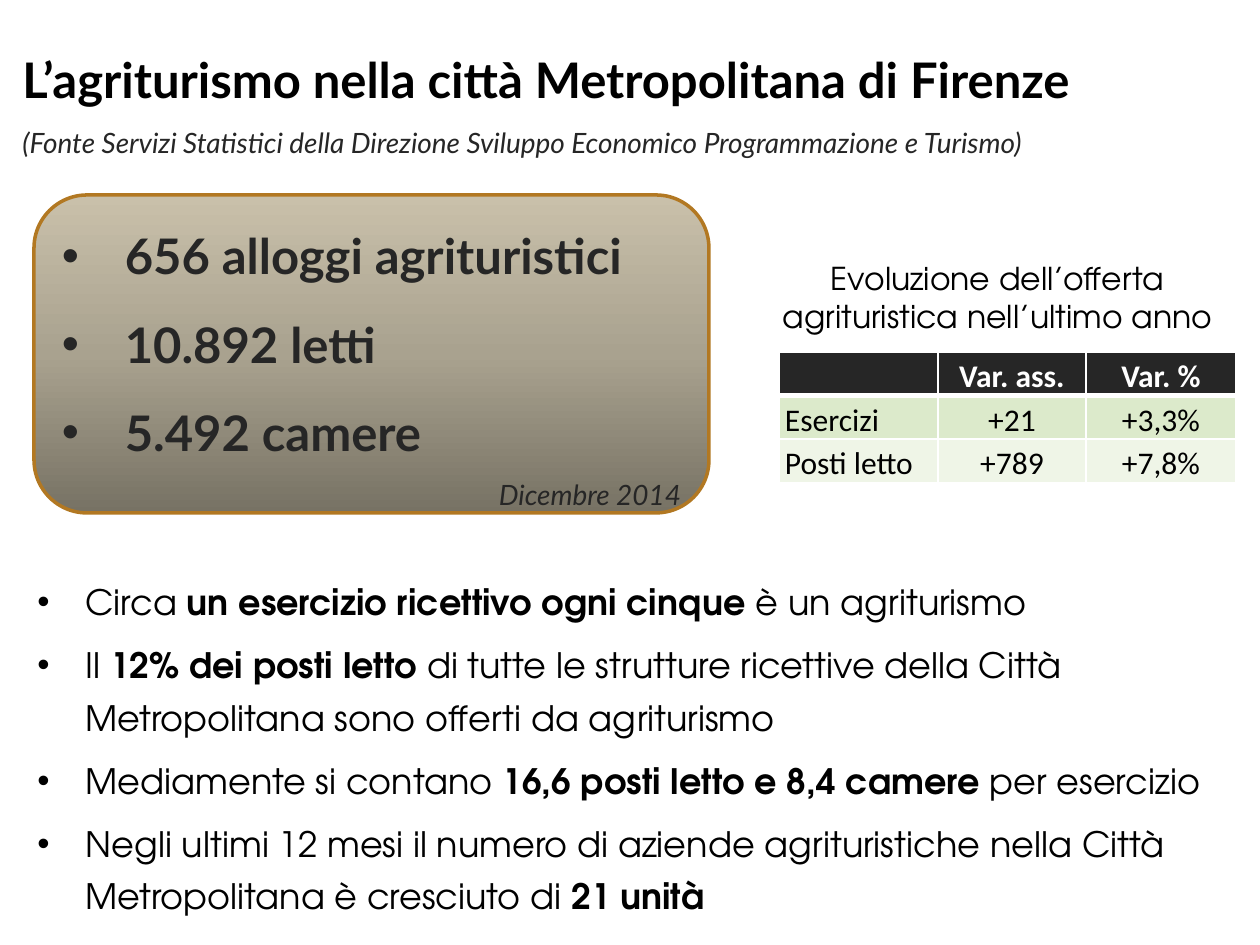
from copy import deepcopy

from lxml import etree
from pptx import Presentation
from pptx import util as u
from pptx.dml.color import RGBColor
from pptx.enum import shapes, text
from pptx.oxml import ns

SCALE = 914400 / 126
COLORS = {
    "black": "000000", "ink": "262626", "white": "FFFFFF", "border": "B27822",
    "dark": "777264", "mid": "A9A28F", "light": "C9C0AA",
    "band": "DCEACB", "pale": "EFF5E7",
}
LATO, ADVENTOR, CALIBRI = "Lato", "TeX Gyre Adventor", "Calibri"
LEFT, CENTER, RIGHT = text.PP_ALIGN.LEFT, text.PP_ALIGN.CENTER, text.PP_ALIGN.RIGHT

FACTS = [
    [("Circa ", False), ("un esercizio ricettivo ogni cinque ", True),
     ("è un agriturismo", False)],
    [("Il ", False), ("12% dei posti letto ", True),
     ("di tutte le strutture ricettive della Città Metropolitana sono offerti da agriturismo", False)],
    [("Mediamente si contano ", False), ("16,6 posti letto e 8,4 camere ", True),
     ("per esercizio", False)],
    [("Negli ultimi 12 mesi il numero di aziende agrituristiche nella Città "
      "Metropolitana è cresciuto di ", False), ("21 unità", True)],
]
CAPACITY = ["656 alloggi agrituristici", "10.892 letti", "5.492 camere"]
CHANGES = [["", "Var. ass.", "Var. %"], ["Esercizi", "+21", "+3,3%"],
           ["Posti letto", "+789", "+7,8%"]]


def px(length):
    """Turn pixels into EMU."""
    return u.Emu(round(length * SCALE))


def rgb(name):
    """Look up a named colour."""
    return RGBColor.from_string(COLORS[name])


def add_run(paragraph, words, font, size, color, bold=False, italic=False):
    """Append one styled run."""
    run = paragraph.add_run()
    run.text = words
    run.font.name, run.font.size = font, u.Pt(size)
    run.font.bold, run.font.italic = bold, italic
    run.font.color.rgb = rgb(color)


def next_paragraph(frame, align=LEFT, spacing=None):
    """Return the unused first paragraph or a new one."""
    first = frame.paragraphs[0]
    paragraph = frame.add_paragraph() if first.runs else first
    paragraph.alignment = align
    paragraph.line_spacing = spacing
    return paragraph


def add_bullet(paragraph, indent):
    """Give a paragraph a hanging round bullet."""
    props = paragraph._p.get_or_add_pPr()
    props.set("marL", str(px(indent)))
    props.set("indent", str(-px(indent)))
    etree.SubElement(props, ns.qn("a:buFont"), typeface="Arial")
    etree.SubElement(props, ns.qn("a:buChar"), char="•")


def add_text_box(slide, *box):
    """Add a wrapping text box and return its frame."""
    frame = slide.shapes.add_textbox(*map(px, box)).text_frame
    frame.word_wrap = True
    return frame


def fill_gradient(shape, names):
    """Fill a shape with evenly spaced colours from bottom to top."""
    shape.fill.gradient()
    shape.fill.gradient_angle = 90
    stops = shape._element.spPr.find(".//" + ns.qn("a:gsLst"))
    stops.insert(1, deepcopy(stops[0]))
    for index, (stop, name) in enumerate(zip(shape.fill.gradient_stops, names)):
        stop.position = index / (len(names) - 1)
        stop.color.rgb = rgb(name)


def add_heading(slide):
    """Add the title with its source line."""
    frame = add_text_box(slide, 10, 14, 1235, 139)
    add_run(next_paragraph(frame, spacing=1.5),
            "L’agriturismo nella città Metropolitana di Firenze", LATO, 28, "black", bold=True)
    add_run(next_paragraph(frame, spacing=1.5),
            "(Fonte Servizi Statistici della Direzione Sviluppo Economico Programmazione e Turismo)",
            LATO, 16, "ink", italic=True)


def add_facts(slide):
    """Add the bulleted facts with their bold figures."""
    frame = add_text_box(slide, 25, 564, 1201, 357)
    for fact in FACTS:
        paragraph = next_paragraph(frame, spacing=u.Pt(30))
        paragraph.space_after = u.Pt(6)
        add_bullet(paragraph, 48)
        for words, bold in fact:
            add_run(paragraph, words, ADVENTOR, 20, "black", bold)


def add_capacity_panel(slide):
    """Add the rounded panel with the capacity figures."""
    panel = slide.shapes.add_shape(
        shapes.MSO_SHAPE.ROUNDED_RECTANGLE, *map(px, (34, 195, 675, 318)))
    panel.shadow.inherit = False
    fill_gradient(panel, ["dark", "mid", "light"])
    panel.line.color.rgb = rgb("border")
    panel.line.width = u.Pt(2)
    frame = panel.text_frame
    frame.word_wrap = True
    frame.vertical_anchor = text.MSO_ANCHOR.MIDDLE
    for figure in CAPACITY:
        paragraph = next_paragraph(frame, spacing=1.5)
        add_bullet(paragraph, 63)
        add_run(paragraph, figure, LATO, 28, "ink", bold=True)
    add_run(next_paragraph(frame, RIGHT, 1.5), "Dicembre 2014", LATO, 16, "ink", italic=True)


def add_borders(cell, **widths):
    """Draw white cell borders of the given point widths."""
    props = cell._tc.get_or_add_tcPr()
    for index, side in enumerate("LRTB"):
        line = etree.Element(ns.qn("a:ln" + side), w=str(u.Pt(widths.get(side, 1))))
        solid = etree.SubElement(line, ns.qn("a:solidFill"))
        etree.SubElement(solid, ns.qn("a:srgbClr"), val=COLORS["white"])
        props.insert(index, line)


def add_changes_table(slide):
    """Add the table of yearly changes."""
    table = slide.shapes.add_table(3, 3, *map(px, (779, 352, 457, 129))).table
    for column, width in zip(table.columns, (159, 148, 150)):
        column.width = px(width)
    fills = ["ink", "band", "pale"]
    borders = [{"B": 3}, {"T": 3}, {}]
    for r, row in enumerate(CHANGES):
        table.rows[r].height = px(43)
        for c, words in enumerate(row):
            cell = table.cell(r, c)
            cell.fill.solid()
            cell.fill.fore_color.rgb = rgb(fills[r])
            add_borders(cell, **borders[r])
            cell.margin_left = cell.margin_right = px(6)
            cell.margin_top = cell.margin_bottom = 0
            cell.vertical_anchor = text.MSO_ANCHOR.MIDDLE
            if words:
                paragraph = next_paragraph(cell.text_frame, CENTER if c else LEFT, 1.15)
                add_run(paragraph, words, CALIBRI, 18, "black" if r else "white", bold=r == 0)


def add_table_caption(slide):
    """Add the caption above the table."""
    frame = add_text_box(slide, 769, 253, 457, 89)
    add_run(next_paragraph(frame, CENTER),
            "Evoluzione dell’offerta agrituristica nell’ultimo anno", ADVENTOR, 18, "black")


def main():
    """Build and save the slide."""
    deck = Presentation()
    deck.slide_width, deck.slide_height = px(1260), px(945)
    slide = deck.slides.add_slide(deck.slide_layouts[6])
    add_heading(slide)
    add_facts(slide)
    add_capacity_panel(slide)
    add_changes_table(slide)
    add_table_caption(slide)
    deck.save("out.pptx")


if __name__ == "__main__":
    main()
